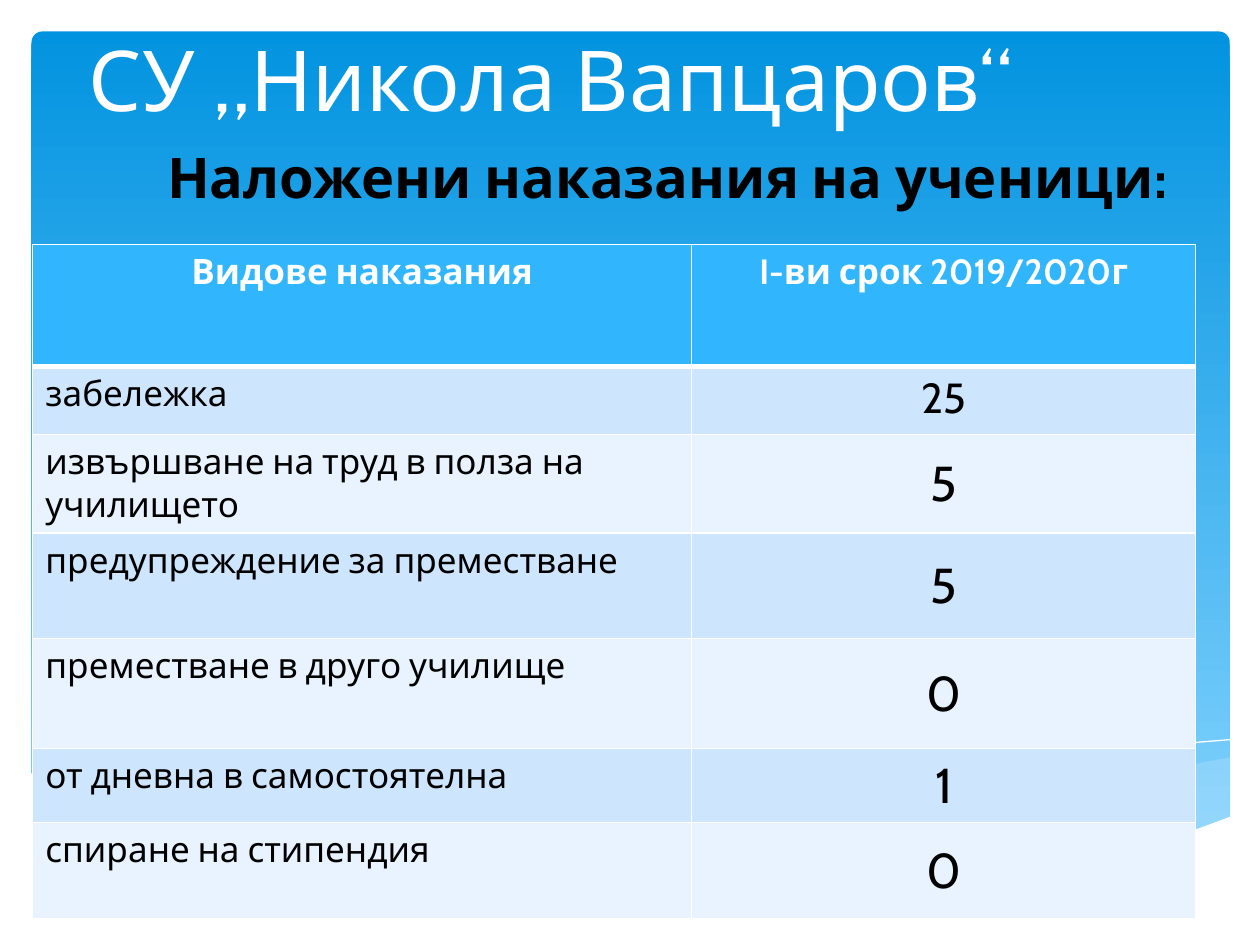
from lxml import etree
from pptx import Presentation
from pptx.dml.color import RGBColor
from pptx.enum.shapes import MSO_SHAPE
from pptx.enum.text import MSO_ANCHOR, PP_ALIGN
from pptx.oxml.ns import qn
from pptx.util import Inches, Pt

LEFT, CENTER = PP_ALIGN.LEFT, PP_ALIGN.CENTER
TOP, MIDDLE, BOTTOM = MSO_ANCHOR.TOP, MSO_ANCHOR.MIDDLE, MSO_ANCHOR.BOTTOM
FONT = "Cabin"
WHITE, BLACK, MIST = "FFFFFF", "000000", "C6E7FC"
HEADER_BLUE, BANDS = "31B6FD", ("CEE5FE", "E8F3FF")


def rgb(value):
    return RGBColor.from_string(value)


def write(frame, text, size, color, bold=False, align=CENTER):
    frame.text = text
    paragraph = frame.paragraphs[0]
    paragraph.alignment = align
    font = paragraph.runs[0].font
    font.name, font.size, font.bold = FONT, Pt(size), bold
    font.color.rgb = rgb(color)


prs = Presentation()
prs.slide_width, prs.slide_height = Inches(10), Inches(7.5)
slide = prs.slides.add_slide(prs.slide_layouts[6])
shapes = slide.shapes

# Blue panel
panel = shapes.add_shape(MSO_SHAPE.ROUNDED_RECTANGLE, Inches(0.25), Inches(0.25),
                         Inches(9.51), Inches(6.6))
panel.adjustments[0] = 0.013
panel.shadow.inherit = False
panel.line.fill.background()
panel.fill.gradient()
panel.fill.gradient_angle = 270
for stop, color in zip(panel.fill.gradient_stops, ("0293E0", "83D3FE")):
    stop.color.rgb = rgb(color)

# Waves: points in hundredths of an inch, fill, opacity in percent (no fill: white outline)
waves = [
    ([(976, 601), (936, 609), (892, 618), (834, 632), (780, 644), (730, 655), (662, 667),
      (706, 673), (746, 677), (782, 679), (815, 680), (855, 678), (890, 674), (922, 667),
      (951, 659), (977, 649), (977, 601)], MIST, 29),
    ([(894, 675), (838, 667), (776, 656), (707, 642), (630, 624), (584, 613), (542, 604),
      (502, 598), (465, 593), (420, 589), (380, 587), (345, 588), (314, 590), (287, 593),
      (323, 598), (363, 604), (405, 613), (450, 624), (530, 642), (602, 657), (666, 668),
      (723, 676), (774, 679), (819, 680), (859, 679)], MIST, 40),
    ([(310, 597), (336, 593), (375, 590), (417, 589), (469, 590), (511, 594), (557, 598),
      (609, 606), (666, 615), (728, 628), (796, 643), (870, 662), (908, 673)], None, 100),
    ([(614, 659), (653, 648), (696, 637), (749, 625), (807, 612), (867, 600), (897, 596),
      (925, 592), (952, 589), (976, 587)], None, 100),
    ([(977, 648), (950, 658), (920, 667), (887, 673), (850, 677), (809, 679), (761, 677),
      (708, 672), (648, 664), (579, 651), (503, 635), (447, 622), (391, 609), (340, 599),
      (292, 592), (250, 588), (211, 586), (177, 586), (146, 587), (119, 589), (95, 593),
      (67, 599), (46, 605), (29, 612), (23, 615), (23, 731), (977, 731)], WHITE, 100),
]
for points, color, opacity in waves:
    builder = shapes.build_freeform(*points[0], scale=Inches(0.01))
    builder.add_line_segments(points[1:], close=color is not None)
    wave = builder.convert_to_shape()
    wave.shadow.inherit = False
    if color is None:
        wave.fill.background()
        wave.line.color.rgb = rgb(WHITE)
        wave.line.width = Pt(0)
        continue
    wave.fill.solid()
    wave.fill.fore_color.rgb = rgb(color)
    wave.line.fill.background()
    if opacity < 100:
        tint = wave.fill._xPr.find(qn("a:solidFill"))[0]
        etree.SubElement(tint, qn("a:alpha"), val=str(opacity * 1000))

# Headings: text, left, top, width, height, size, colour, bold, anchor
headings = [
    ("СУ „Никола Вапцаров“", 0.2, 0.13, 8.35, 0.94, 48, WHITE, False, BOTTOM),
    ("Наложени наказания на ученици:", 0.81, 1.13, 8.99, 0.6, 32, BLACK, True, TOP),
]
for text, left, top, width, height, size, color, bold, anchor in headings:
    frame = shapes.add_textbox(*map(Inches, (left, top, width, height))).text_frame
    frame.word_wrap = True
    frame.vertical_anchor = anchor
    write(frame, text, size, color, bold)
frame.margin_left = frame.margin_top = frame.margin_bottom = 0
frame.margin_right = Inches(0.02)

# Table of penalties
penalties = [
    ("Видове наказания", "I-ви срок 2019/2020г"),
    ("забележка", "25"),
    ("извършване на труд в полза на училището", "5"),
    ("предупреждение за преместване", "5"),
    ("преместване в друго училище", "0"),
    ("от дневна в самостоятелна", "1"),
    ("спиране на стипендия", "0"),
]
column_widths = (5.23, 4)
row_heights = (0.97, 0.54, 0.78, 0.84, 0.87, 0.59, 0.76)
table = shapes.add_table(len(penalties), 2, Inches(0.26), Inches(1.94),
                         Inches(sum(column_widths)), Inches(sum(row_heights))).table
table.horz_banding = False
for column, width in zip(table.columns, column_widths):
    column.width = Inches(width)
for row, height in zip(table.rows, row_heights):
    row.height = Inches(height)

for r, entries in enumerate(penalties):
    for c, text in enumerate(entries):
        cell = table.cell(r, c)
        header, count = r == 0, r > 0 and c == 1
        size = 20 if not count else 24 if r == 1 else 28
        write(cell.text_frame, text, size, WHITE if header else BLACK, header,
              CENTER if header or count else LEFT)
        cell.vertical_anchor = MIDDLE if count and r > 1 else TOP
        cell.fill.solid()
        cell.fill.fore_color.rgb = rgb(HEADER_BLUE if header else BANDS[(r - 1) % 2])

        widths = {"L": 1, "R": 1, "T": 3 if r == 1 else 1, "B": 3 if header else 1}
        properties = cell._tc.get_or_add_tcPr()
        for position, (side, points) in enumerate(widths.items()):
            border = etree.Element(qn(f"a:ln{side}"), w=str(Pt(points)))
            solid = etree.SubElement(border, qn("a:solidFill"))
            etree.SubElement(solid, qn("a:srgbClr"), val=WHITE)
            properties.insert(position, border)

prs.save("out.pptx")
